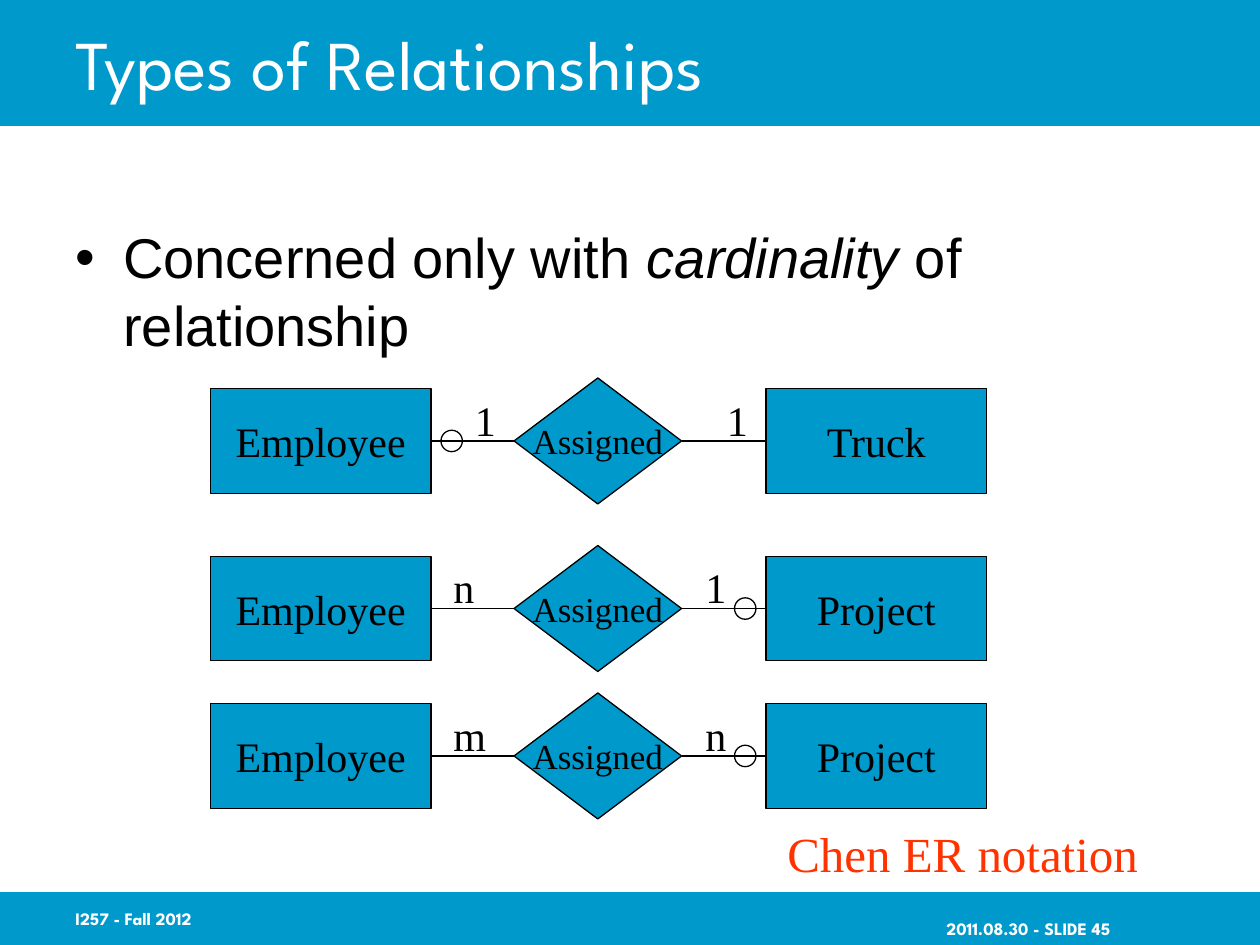
from dataclasses import dataclass

from lxml.etree import SubElement
from pptx import Presentation
from pptx.dml.color import RGBColor
from pptx.enum.shapes import MSO_CONNECTOR, MSO_SHAPE
from pptx.enum.text import MSO_ANCHOR as Anchor, PP_ALIGN as Align
from pptx.oxml.ns import qn
from pptx.util import Inches, Pt

COLORS = {"band": "0099CC", "ink": "000000", "paper": "FFFFFF", "note": "FF3300"}
SERIF, SANS, DISPLAY = "Times New Roman", "Arial", "League Spartan"

ENTITY_WIDTH, ENTITY_HEIGHT = 1.75, 0.83
DIAMOND_WIDTH, DIAMOND_HEIGHT = 1.33, 1
LEFT_ENTITY, DIAMOND, RIGHT_ENTITY = 1.67, 4.08, 6.08
CIRCLE = 0.17


@dataclass(frozen=True)
class Relationship:
    middle: float
    target: str
    left_label: str
    left_label_x: float
    right_label: str
    right_label_x: float
    circle_x: float


RELATIONSHIPS = [
    Relationship(3.5, "Truck", "1", 3.67, "1", 5.67, 3.5),
    Relationship(4.83, "Project", "n", 3.5, "1", 5.5, 5.83),
    Relationship(6, "Project", "m", 3.5, "n", 5.5, 5.83),
]


def rgb(name: str) -> RGBColor:
    return RGBColor.from_string(COLORS[name])


def set_font(font, face: str, size: float, color: str = "ink", bold: bool = False) -> None:
    for key, value in {"name": face, "size": Pt(size), "bold": bold}.items():
        setattr(font, key, value)
    font.color.rgb = rgb(color)


def add_shape(slide, kind, x: float, y: float, width: float, height: float,
              fill: str | None = "band", line: str | None = "ink"):
    shape = slide.shapes.add_shape(kind, *map(Inches, (x, y, width, height)))
    shape.shadow.inherit = False
    if fill:
        shape.fill.solid()
        shape.fill.fore_color.rgb = rgb(fill)
    else:
        shape.fill.background()
    if line:
        shape.line.color.rgb = rgb(line)
        shape.line.width = Pt(0.75)
    else:
        shape.line.fill.background()
    return shape


def add_node(slide, kind, x: float, middle: float, width: float, height: float,
             name: str, size: float) -> None:
    """Draw an entity or relationship, centred vertically on middle."""
    frame = add_shape(slide, kind, x, middle - height / 2, width, height).text_frame
    frame.word_wrap = False
    frame.vertical_anchor = Anchor.MIDDLE
    label = frame.paragraphs[0]
    label.text = name
    label.alignment = Align.CENTER
    set_font(label.font, SERIF, size)


def add_text(slide, x: float, y: float, width: float, height: float, text: str,
             face: str, size: float, color: str = "ink", bold: bool = False,
             **frame_format):
    frame = slide.shapes.add_textbox(*map(Inches, (x, y, width, height))).text_frame
    for key, value in frame_format.items():
        setattr(frame, key, value)
    paragraph = frame.paragraphs[0]
    paragraph.text = text
    set_font(paragraph.font, face, size, color, bold)
    return paragraph


def add_link(slide, start: float, end: float, y: float) -> None:
    link = slide.shapes.add_connector(
        MSO_CONNECTOR.STRAIGHT, *map(Inches, (start, y, end, y)))
    link.line.color.rgb = rgb("ink")
    link.line.width = Pt(0.75)
    SubElement(link._element.spPr, qn("a:effectLst"))


def add_bullet(slide) -> None:
    frame = slide.shapes.add_textbox(*map(Inches, (0.5, 1.72, 9.25, 4.45))).text_frame
    frame.word_wrap = True
    paragraph = frame.paragraphs[0]
    properties = paragraph._p.get_or_add_pPr()
    properties.set("marL", str(Inches(0.38)))
    properties.set("indent", str(Inches(-0.38)))
    SubElement(properties, qn("a:buFont"), typeface=SANS)
    SubElement(properties, qn("a:buChar"), char="•")
    set_font(paragraph.font, SANS, 32)
    for text, italic in (("Concerned only with ", False), ("cardinality ", True),
                         ("of relationship", False)):
        run = paragraph.add_run()
        run.text = text
        set_font(run.font, SANS, 32)
        run.font.italic = italic


def add_relationship(slide, relation: Relationship) -> None:
    middle = relation.middle
    for x, name in ((LEFT_ENTITY, "Employee"), (RIGHT_ENTITY, relation.target)):
        add_node(slide, MSO_SHAPE.RECTANGLE, x, middle,
                 ENTITY_WIDTH, ENTITY_HEIGHT, name, 24)
    add_node(slide, MSO_SHAPE.FLOWCHART_DECISION, DIAMOND, middle,
             DIAMOND_WIDTH, DIAMOND_HEIGHT, "Assigned", 20)
    add_link(slide, LEFT_ENTITY + ENTITY_WIDTH, DIAMOND, middle)
    add_link(slide, DIAMOND + DIAMOND_WIDTH, RIGHT_ENTITY, middle)
    add_shape(slide, MSO_SHAPE.OVAL, relation.circle_x, middle - CIRCLE / 2,
              CIRCLE, CIRCLE, fill=None)
    for x, cardinality in ((relation.left_label_x, relation.left_label),
                           (relation.right_label_x, relation.right_label)):
        add_text(slide, x, middle - 0.42, 0.37, 0.5, cardinality, SERIF, 24,
                 word_wrap=False)


def main() -> None:
    deck = Presentation()
    deck.slide_width, deck.slide_height = Inches(10), Inches(7.5)
    slide = deck.slides.add_slide(deck.slide_layouts[6])

    for top, height in ((0, 1), (7.08, 0.42)):
        add_shape(slide, MSO_SHAPE.RECTANGLE, 0, top, 10, height, line=None)
    centred = {"word_wrap": True, "vertical_anchor": Anchor.MIDDLE}
    add_text(slide, 0.5, 0, 8.5, 1, "Types of Relationships", DISPLAY, 40,
             "paper", **centred)
    add_text(slide, 0.5, 7.08, 2.08, 0.42, "I257 - Fall 2012", DISPLAY, 10,
             "paper", True, **centred)
    date = add_text(slide, 6.73, 7.24, 2.08, 0.26, "2011.08.30 - SLIDE 45",
                    DISPLAY, 10, "paper", True, margin_right=0, **centred)
    date.alignment = Align.RIGHT

    add_bullet(slide)
    for relation in RELATIONSHIPS:
        add_relationship(slide, relation)
    add_text(slide, 6.15, 6.49, 2.99, 0.57, "Chen ER notation", SERIF, 28,
             "note", word_wrap=False)
    deck.save("out.pptx")


if __name__ == "__main__":
    main()
